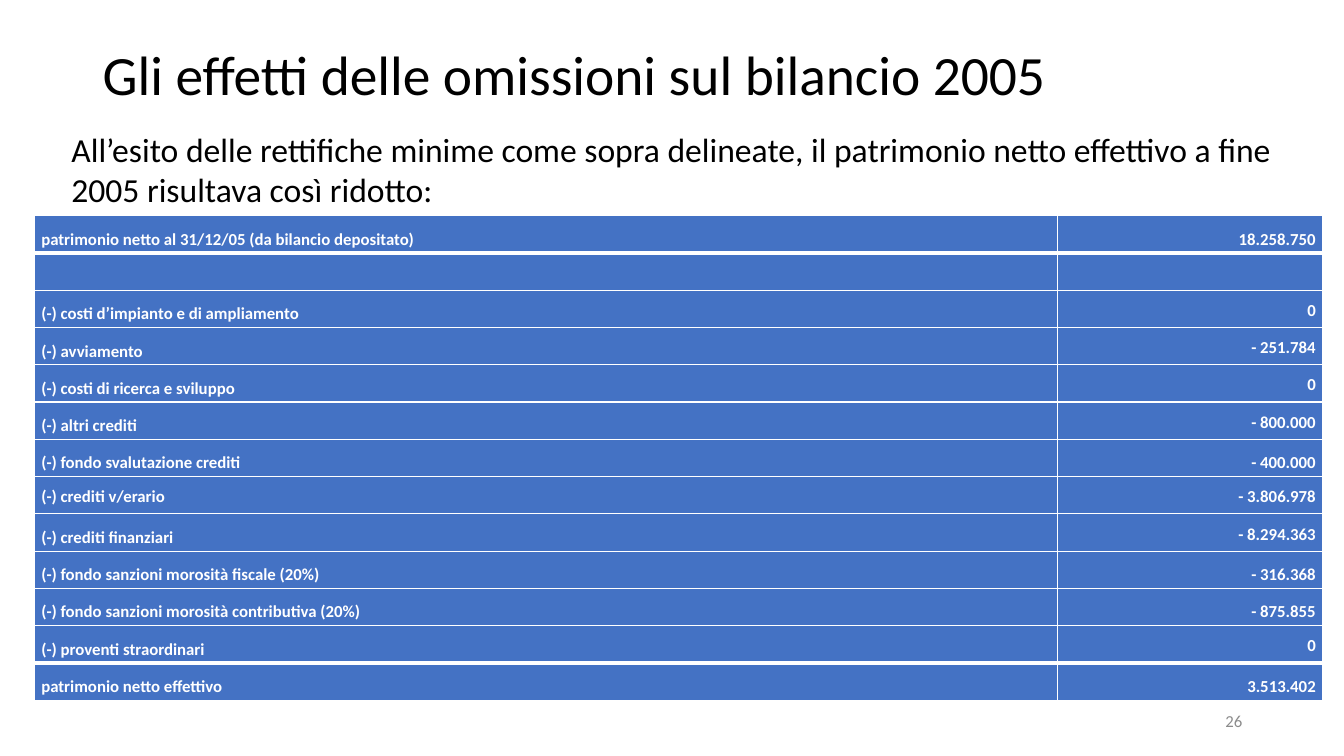
"""Build the slide on the effects of the omissions on the 2005 balance sheet."""
from dataclasses import dataclass

import pptx
import pptx.dml.color
import pptx.enum.text
import pptx.oxml
import pptx.oxml.ns
import pptx.util
from pptx.util import Inches

ALIGN = pptx.enum.text.PP_ALIGN
ANCHOR = pptx.enum.text.MSO_ANCHOR


@dataclass(frozen=True)
class Theme:
    """Font, colours and type sizes."""
    font: str = "Calibri"
    ink: str = "000000"
    paper: str = "FFFFFF"
    cell: str = "4472C4"
    muted: str = "8C8C8C"
    title: float = 39.6
    body: float = 24
    small: float = 12
    thin: float = 1
    thick: float = 3


@dataclass(frozen=True)
class Box:
    """A text box with its place and format."""
    text: str
    at: tuple[float, float, float, float]
    size: float
    color: str
    align: ALIGN = ALIGN.LEFT
    anchor: ANCHOR = ANCHOR.MIDDLE
    spacing: float = 1.0


@dataclass(frozen=True)
class Entry:
    """A table row with its two anchors."""
    label: str
    value: str
    value_anchor: ANCHOR = ANCHOR.MIDDLE
    label_anchor: ANCHOR = ANCHOR.MIDDLE


T = Theme()
BOXES = [
    Box("Gli effetti delle omissioni sul bilancio 2005", (0.92, 0.4, 11.5, 0.73),
        T.title, T.ink, spacing=0.9),
    Box("26", (9.42, 6.95, 3, 0.4), T.small, T.muted, ALIGN.RIGHT),
    Box("All’esito delle rettifiche minime come sopra delineate, il patrimonio netto "
        "effettivo a fine 2005 risultava così ridotto:", (0.61, 1.23, 12.22, 0.91),
        T.body, T.ink, anchor=ANCHOR.TOP),
]
ENTRIES = [
    Entry("patrimonio netto al 31/12/05 (da bilancio depositato)", "18.258.750"),
    Entry("", ""),
    Entry("(-) costi d’impianto e di ampliamento", "0", ANCHOR.TOP),
    Entry("(-) avviamento", "- 251.784", ANCHOR.TOP),
    Entry("(-) costi di ricerca e sviluppo", "0", ANCHOR.TOP),
    Entry("(-) altri crediti", "- 800.000", ANCHOR.TOP),
    Entry("(-) fondo svalutazione crediti", "- 400.000"),
    Entry("(-) crediti v/erario", "- 3.806.978", ANCHOR.TOP, ANCHOR.TOP),
    Entry("(-) crediti finanziari", "- 8.294.363", ANCHOR.TOP),
    Entry("(-) fondo sanzioni morosità fiscale (20%)", "- 316.368"),
    Entry("(-) fondo sanzioni morosità contributiva (20%)", "- 875.855"),
    Entry("(-) proventi straordinari", "0", ANCHOR.TOP),
    Entry("patrimonio netto effettivo", "3.513.402"),
]
COLUMNS = (10.15, 2.63)
TABLE_AT = (0.34, 2.14, sum(COLUMNS), 4.81)


def assign(target: object, values: dict) -> None:
    """Set each named attribute on the target."""
    for name, value in values.items():
        setattr(target, name, value)


def write(tf, text: str, size: float, color: str, align: ALIGN,
          spacing: float, bold: bool = False) -> None:
    """Write one formatted paragraph into a text frame."""
    p = tf.paragraphs[0]
    assign(p, {"alignment": align, "line_spacing": spacing})
    r = p.add_run()
    r.text = text
    assign(r.font, {"name": T.font, "size": pptx.util.Pt(size), "bold": bold})
    r.font.color.rgb = pptx.dml.color.RGBColor.from_string(color)


def add_box(s, box: Box) -> None:
    """Add a text box to the slide."""
    tf = s.shapes.add_textbox(*map(Inches, box.at)).text_frame
    assign(tf, {"word_wrap": True, "vertical_anchor": box.anchor})
    write(tf, box.text, box.size, box.color, box.align, box.spacing)


def set_borders(cell, top: float, bottom: float) -> None:
    """Draw the four borders of a cell."""
    tc_pr = cell._tc.get_or_add_tcPr()
    widths = {"lnL": T.thin, "lnR": T.thin, "lnT": top, "lnB": bottom}
    for i, (tag, width) in enumerate(widths.items()):
        tc_pr.insert(i, pptx.oxml.parse_xml(
            f'<a:{tag} {pptx.oxml.ns.nsdecls("a")} w="{pptx.util.Pt(width)}">'
            f'<a:solidFill><a:srgbClr val="{T.paper}"/></a:solidFill></a:{tag}>'))


def fill_cell(cell, text: str, align: ALIGN, anchor: ANCHOR) -> None:
    """Fill a cell with colour and text."""
    assign(cell, {"margin_left": Inches(0.07), "margin_right": Inches(0.07),
                  "margin_top": 0, "margin_bottom": 0, "vertical_anchor": anchor})
    cell.fill.solid()
    cell.fill.fore_color.rgb = pptx.dml.color.RGBColor.from_string(T.cell)
    if text:
        write(cell.text_frame, text, T.small, T.paper, align, 1.5, True)


def add_table(s, entries: list[Entry]) -> None:
    """Add the table of adjustments to the slide."""
    table = s.shapes.add_table(len(entries), len(COLUMNS), *map(Inches, TABLE_AT)).table
    assign(table, {"first_row": False, "horz_banding": False})
    for column, width in zip(table.columns, COLUMNS):
        column.width = Inches(width)
    last = len(entries) - 1
    for i, entry in enumerate(entries):
        table.rows[i].height = Inches(TABLE_AT[3] / len(entries))
        label, value = table.rows[i].cells
        fill_cell(label, entry.label, ALIGN.JUSTIFY, entry.label_anchor)
        fill_cell(value, entry.value, ALIGN.RIGHT, entry.value_anchor)
        for cell in (label, value):
            set_borders(cell, T.thick if i in (1, last) else T.thin,
                        T.thick if i in (0, last - 1) else T.thin)


def main() -> None:
    """Build and save the slide."""
    prs = pptx.Presentation()
    assign(prs, {"slide_width": Inches(13.33), "slide_height": Inches(7.5)})
    s = prs.slides.add_slide(prs.slide_layouts[6])
    add_table(s, ENTRIES)
    for box in BOXES:
        add_box(s, box)
    prs.save("out.pptx")


if __name__ == "__main__":
    main()
